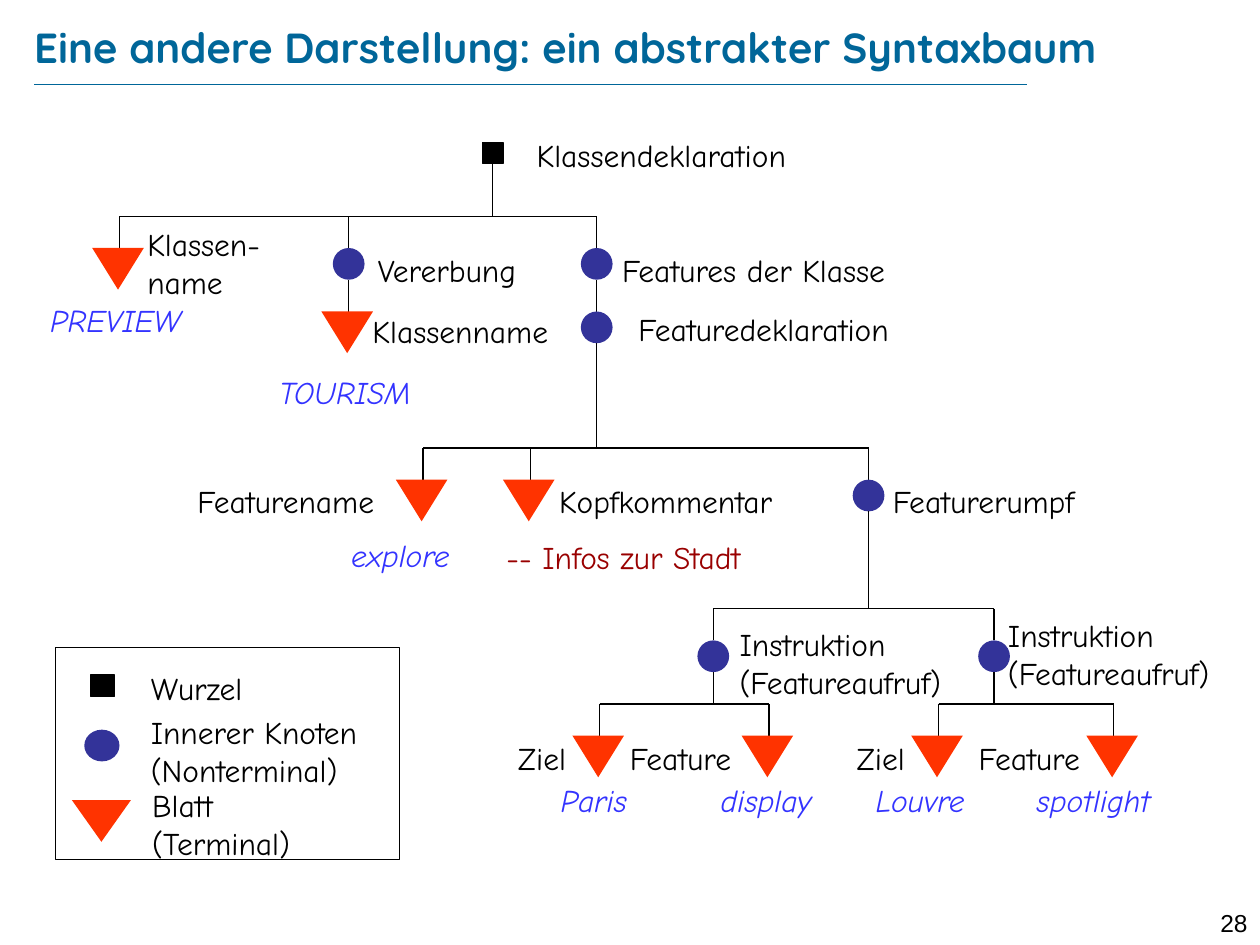
from lxml import etree
from pptx import Presentation
from pptx.dml.color import RGBColor
from pptx.enum.shapes import MSO_CONNECTOR, MSO_SHAPE
from pptx.enum.text import MSO_ANCHOR, PP_ALIGN
from pptx.oxml.ns import qn
from pptx.util import Cm, Pt

STRAIGHT = MSO_CONNECTOR.STRAIGHT
RECTANGLE = MSO_SHAPE.RECTANGLE
ROOT = MSO_SHAPE.FLOWCHART_PROCESS
INNER = MSO_SHAPE.FLOWCHART_CONNECTOR
LEAF = MSO_SHAPE.FLOWCHART_MERGE
TOP, MIDDLE = MSO_ANCHOR.TOP, MSO_ANCHOR.MIDDLE
LEFT, RIGHT = PP_ALIGN.LEFT, PP_ALIGN.RIGHT

BLACK = RGBColor(0x00, 0x00, 0x00)
TEAL = RGBColor(0x00, 0x66, 0x99)
INDIGO = RGBColor(0x33, 0x33, 0x99)
ORANGE = RGBColor(0xFF, 0x33, 0x00)
BLUE = RGBColor(0x33, 0x33, 0xFF)
DARK_RED = RGBColor(0x99, 0x00, 0x00)

FILLS = {ROOT: BLACK, INNER: INDIGO, LEAF: ORANGE}
# Node geometry in cm: offset of the left edge from the stem, width, height
NODES = {ROOT: (0.2, 0.41, 0.43), INNER: (0.32, 0.64, 0.64), LEAF: (0.55, 1.04, 0.84)}
STEM = 0.64

LABEL = {"name": "Comic Neue", "size": Pt(18)}
TERMINAL = {**LABEL, "italic": True}
TITLE = {"name": "Quicksand", "size": Pt(24), "bold": True}
NUMBER = {"name": "Arial", "size": Pt(14)}


class TreeSlide:
    def __init__(self, page):
        self.page = page

    def line(self, x1, y1, x2, y2, color=BLACK, width=0.75):
        connector = self.page.shapes.add_connector(STRAIGHT, Cm(x1), Cm(y1), Cm(x2), Cm(y2))
        connector.line.color.rgb = color
        connector.line.width = Pt(width)
        etree.SubElement(connector._element.spPr, qn("a:effectLst"))

    def shape(self, kind, left, top, width, height):
        shape = self.page.shapes.add_shape(kind, Cm(left), Cm(top), Cm(width), Cm(height))
        shape.shadow.inherit = False
        if kind in FILLS:
            shape.fill.solid()
            shape.fill.fore_color.rgb = FILLS[kind]
        else:
            shape.fill.background()
        if kind in (ROOT, RECTANGLE):
            shape.line.color.rgb = BLACK
            shape.line.width = Pt(0.75)
        else:
            shape.line.fill.background()

    def node(self, kind, x, top):
        offset, width, height = NODES[kind]
        self.shape(kind, x - offset, top, width, height)

    def child(self, kind, x, top):
        """Draw a stem from top and the node that hangs on it."""
        self.line(x, top, x, top + STEM)
        self.node(kind, x, top + STEM)

    def branch(self, x, bottom, bar, children):
        """Draw a trunk down to a bar that carries the children."""
        self.line(x, bottom, x, bar)
        self.line(children[0][1], bar, children[-1][1], bar)
        for kind, child_x in children:
            self.child(kind, child_x, bar)

    def text(self, lines, left, top, width, height=1.02, style=LABEL, color=BLACK,
             align=LEFT, anchor=TOP, margin=None):
        box = self.page.shapes.add_textbox(Cm(left), Cm(top), Cm(width), Cm(height))
        frame = box.text_frame
        frame.word_wrap = True
        frame.vertical_anchor = anchor
        if margin is not None:
            for side in ("left", "right", "top", "bottom"):
                setattr(frame, f"margin_{side}", Cm(margin))
        for index, line in enumerate(lines.split("\n")):
            para = frame.add_paragraph() if index else frame.paragraphs[0]
            para.alignment = align
            span = para.add_run()
            span.text = line
            for name, value in style.items():
                setattr(span.font, name, value)
            span.font.color.rgb = color


def main():
    deck = Presentation()
    deck.slide_width, deck.slide_height = Cm(25.4), Cm(19.05)
    tree = TreeSlide(deck.slides.add_slide(deck.slide_layouts[6]))

    # Title, rule and page number
    tree.line(0.69, 1.7, 20.7, 1.7, TEAL, 0.25)
    tree.text("28", 24, 18.19, 1.4, 0.61, NUMBER, align=RIGHT)
    tree.text("Eine andere Darstellung: ein abstrakter Syntaxbaum", 0.69, 0.33, 22.07, 1.22,
              TITLE, TEAL, anchor=MIDDLE, margin=0)

    # Tree
    tree.node(ROOT, 9.93, 2.87)
    tree.branch(9.93, 3.3, 4.36, [(LEAF, 2.41), (INNER, 7.03), (INNER, 12.03)])
    tree.child(LEAF, 7.03, 5.64)
    tree.child(INNER, 12.03, 5.64)
    tree.branch(12.03, 6.92, 9.03, [(LEAF, 8.53), (LEAF, 10.69), (INNER, 17.51)])
    tree.branch(17.51, 10.31, 12.27, [(INNER, 14.38), (INNER, 20.04)])
    tree.branch(14.38, 13.55, 14.19, [(LEAF, 12.09), (LEAF, 15.5)])
    tree.branch(20.04, 13.55, 14.19, [(LEAF, 18.92), (LEAF, 22.45)])

    # Node labels
    for label, left, top, width in [
        ("Klassendeklaration", 10.57, 2.62, 6.05),
        ("Klassen-name", 2.72, 4.42, 3.73),
        ("Vererbung", 7.37, 4.93, 3.8),
        ("Features der Klasse", 12.29, 4.93, 6.5),
        ("Klassenname", 7.26, 6.17, 4.37),
        ("Featuredeklaration", 12.62, 6.12, 6.2),
        ("Featurename", 3.73, 9.6, 4.34),
        ("Kopfkommentar", 11.02, 9.6, 5.64),
        ("Featurerumpf", 17.75, 9.6, 4.65),
        ("Instruktion\n(Featureaufruf)", 14.66, 12.47, 5.26),
        ("Instruktion\n(Featureaufruf)", 20.07, 12.29, 5.26),
        ("Ziel", 10.19, 14.78, 2),
        ("Feature", 12.45, 14.78, 3),
        ("Ziel", 17.02, 14.78, 2),
        ("Feature", 19.48, 14.78, 3),
    ]:
        tree.text(label, left, top, width, 1.78 if "-" in label or "\n" in label else 1.02)

    # Terminal values
    for value, left, top in [
        ("PREVIEW", 0.76, 5.94),
        ("TOURISM", 5.38, 7.39),
        ("explore", 6.83, 10.69),
        ("Paris", 11.05, 15.62),
        ("display", 14.28, 15.62),
        ("Louvre", 17.4, 15.62),
        ("spotlight", 20.65, 15.62),
    ]:
        tree.text(value, left, top, 3.6, style=TERMINAL, color=BLUE)
    tree.text("-- Infos zur Stadt", 9.96, 10.72, 5.97, color=DARK_RED)

    # Legend
    tree.shape(RECTANGLE, 1.12, 13.06, 6.93, 4.27)
    tree.shape(ROOT, 1.83, 13.61, 0.48, 0.43)
    tree.shape(INNER, 1.7, 14.71, 0.71, 0.64)
    tree.shape(LEAF, 1.45, 16.13, 1.19, 0.84)
    tree.text("Wurzel", 2.79, 13.36, 2.67)
    tree.text("Innerer Knoten\n(Nonterminal)", 2.79, 14.25, 5.05, 1.65)
    tree.text("Blatt\n(Terminal)", 2.82, 15.72, 3.56, 1.65)

    deck.save("out.pptx")


if __name__ == "__main__":
    main()
